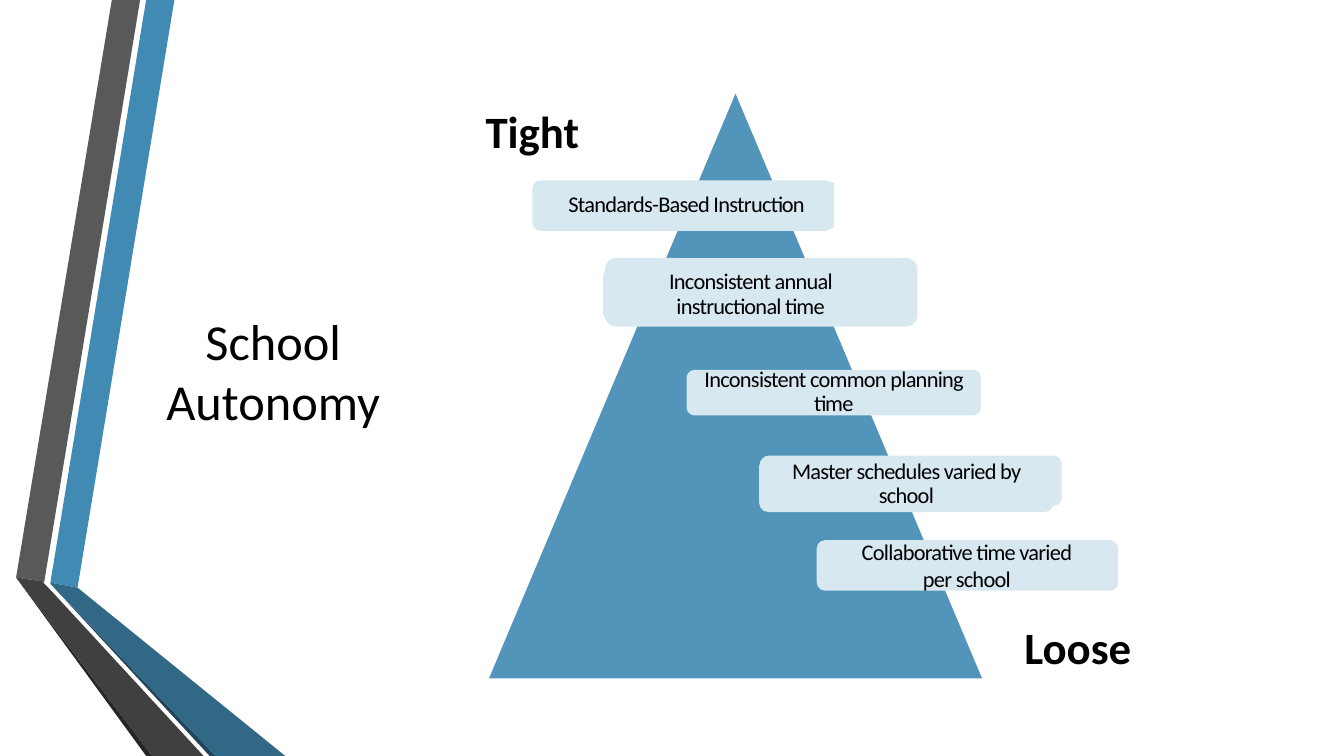
from lxml import etree
from pptx import Presentation
from pptx.dml.color import RGBColor
from pptx.enum import shapes, text
from pptx.oxml import ns
from pptx.util import Inches, Pt

BLUE = RGBColor(0x41, 0x8A, 0xB3)
BLUE_SHADE = RGBColor(0x31, 0x68, 0x86)
BLUE_EDGE = RGBColor(0x20, 0x45, 0x5A)
GRAY = RGBColor(0x59, 0x59, 0x59)
GRAY_SHADE = RGBColor(0x40, 0x40, 0x40)
GRAY_EDGE = RGBColor(0x26, 0x26, 0x26)
PALE_BLUE = RGBColor(0xD8, 0xE8, 0xF1)
BLACK = RGBColor(0, 0, 0)

ROUNDED = shapes.MSO_SHAPE.ROUNDED_RECTANGLE
PLAIN = shapes.MSO_SHAPE.RECTANGLE

# Ribbon outlines in hundredths of an inch from the corner of the slide
RIBBON_FACES = [
    (BLUE, [(50, 578), (77, 583), (173, 0), (145, 0)]),
    (GRAY, [(139, 0), (111, 0), (16, 573), (44, 577)]),
    (GRAY_EDGE, [(16, 573), (145, 750), (151, 750)]),
    (BLUE_EDGE, [(50, 579), (208, 750), (214, 750)]),
    (BLUE_SHADE, [(50, 579), (214, 750), (283, 750), (77, 583), (50, 578)]),
    (GRAY_SHADE, [(202, 750), (48, 583), (43, 578), (44, 577), (16, 573), (151, 750)]),
]

# Each label: backing box (or None), text box, text box shape, inset, lines.
# Boxes are left, top, width, height, measured from the pyramid's corner.
LABELS = [
    ((1.15, 1.63, 3.1, 0.68), (1.13, 1.73, 2.93, 0.53), ROUNDED, 0.15,
     ["Inconsistent annual instructional time"]),
    (None, (1.96, 2.74, 2.92, 0.45), ROUNDED, 0.08,
     ["Inconsistent common planning time"]),
    ((2.69, 3.59, 2.99, 0.5), (2.68, 3.6, 2.92, 0.55), ROUNDED, 0.08,
     ["Master schedules varied by school"]),
    ((0.43, 0.86, 2.99, 0.5), (0.5, 0.88, 2.92, 0.45), PLAIN, 0.08,
     ["Standards-Based Instruction"]),
    ((3.25, 4.43, 2.99, 0.5), (3.28, 4.45, 2.92, 0.45), PLAIN, 0.08,
     ["Collaborative time varied", "per school"]),
]


def paint(shape, color):
    """Give the shape a flat fill with no line or shadow."""
    shape.shadow.inherit = False
    shape.fill.solid()
    shape.fill.fore_color.rgb = color
    shape.line.fill.background()


def add_block(slide, kind, box, color):
    shape = slide.shapes.add_shape(kind, *map(Inches, box))
    paint(shape, color)
    return shape


def write_lines(shape, lines, size, inset, anchor, bold=False, line_spacing=None, tracking=0):
    frame = shape.text_frame
    frame_format = {"word_wrap": True, "vertical_anchor": anchor}
    for side in ("left", "top", "right", "bottom"):
        frame_format[f"margin_{side}"] = Inches(inset)
    for name, value in frame_format.items():
        setattr(frame, name, value)
    for index, line in enumerate(lines):
        paragraph = frame.add_paragraph() if index else frame.paragraphs[0]
        paragraph.alignment = text.PP_ALIGN.CENTER
        paragraph.line_spacing = line_spacing
        run = paragraph.add_run()
        run.text = line
        for name, value in {"name": "Calibri", "size": Pt(size), "bold": bold}.items():
            setattr(run.font, name, value)
        run.font.color.rgb = BLACK
        if tracking:
            run._r.get_or_add_rPr().set("spc", str(round(tracking * 100)))


def add_caption(slide, caption, box, size, anchor, bold=False):
    shape = slide.shapes.add_textbox(*map(Inches, box))
    write_lines(shape, [caption], size, 0.1, anchor, bold)


def add_ribbons(slide, left, top):
    for color, points in RIBBON_FACES:
        builder = slide.shapes.build_freeform(*points[0], scale=Inches(0.01))
        builder.add_line_segments(points[1:], close=True)
        paint(builder.convert_to_shape(Inches(left), Inches(top)), color)


def add_label(slide, left, top, backing, box, kind, inset, lines):
    def place(part):
        return left + part[0], top + part[1], part[2], part[3]

    if backing:
        add_block(slide, ROUNDED, place(backing), PALE_BLUE)
    shape = add_block(slide, kind, place(box), PALE_BLUE)
    write_lines(shape, lines, 16, inset, text.MSO_ANCHOR.MIDDLE,
                line_spacing=0.9 if len(lines) == 1 else None, tracking=-0.5)


def add_pyramid(slide, left, top, width, height):
    """Draw the triangle, its labels and the captions at both ends."""
    triangle = add_block(slide, shapes.MSO_SHAPE.ISOSCELES_TRIANGLE,
                         (left, top, width, height), BLUE)
    fill_color = triangle.fill._xPr.find(ns.qn("a:solidFill"))[0]
    etree.SubElement(fill_color, ns.qn("a:alpha")).set("val", "90000")
    for label in LABELS:
        add_label(slide, left, top, *label)
    ends = [("Tight", left - 0.48, top), ("Loose", left + width + 0.04, top + height - 0.68)]
    for caption, x, y in ends:
        add_caption(slide, caption, (x, y, 1.82, 0.74), 32, text.MSO_ANCHOR.TOP, bold=True)


def main():
    presentation = Presentation()
    presentation.slide_width = Inches(13.33)
    presentation.slide_height = Inches(7.5)
    slide = presentation.slides.add_slide(presentation.slide_layouts[6])
    add_ribbons(slide, 0, 0)
    add_caption(slide, "School Autonomy", (1.22, 1.16, 2.98, 5.03), 36, text.MSO_ANCHOR.MIDDLE)
    add_pyramid(slide, 4.85, 0.93, 4.89, 5.8)
    presentation.save("out.pptx")


if __name__ == "__main__":
    main()
